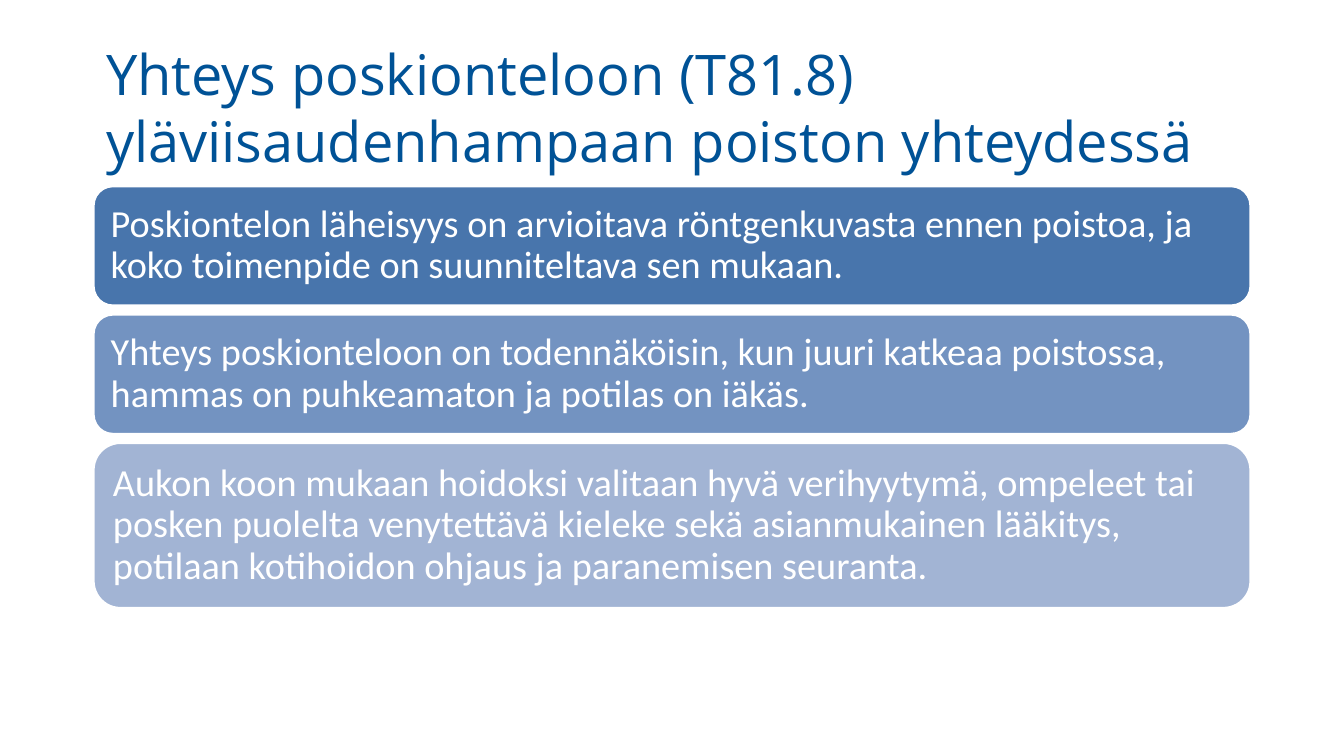
from dataclasses import dataclass

from pptx import Presentation
from pptx.dml.color import RGBColor
from pptx.enum.shapes import MSO_SHAPE as Shape
from pptx.enum.text import MSO_ANCHOR as Anchor, PP_ALIGN as Align
from pptx.util import Inches, Pt


@dataclass(frozen=True)
class TextStyle:
    font: str
    size: float
    color: str
    line_spacing: float


@dataclass(frozen=True)
class Theme:
    title: TextStyle = TextStyle("Open Sans", 30, "005296", 1.0)
    body: TextStyle = TextStyle("Calibri", 20.5, "FFFFFF", 0.9)
    outline: str = "FFFFFF"


@dataclass(frozen=True)
class Panel:
    text: str
    fill: str
    height: float


THEME = Theme()
LEFT, WIDTH = 0.69, 8.62
PANELS_TOP, PANELS_BOTTOM = 1.38, 4.53

TITLE = "Yhteys poskionteloon (T81.8) yläviisaudenhampaan poiston yhteydessä"
PANELS = [
    Panel("Poskiontelon läheisyys on arvioitava röntgenkuvasta ennen poistoa, "
          "ja koko toimenpide on suunniteltava sen mukaan.", "4875AC", 0.9),
    Panel("Yhteys poskionteloon on todennäköisin, kun juuri katkeaa poistossa, "
          "hammas on puhkeamaton ja potilas on iäkäs.", "7393C1", 0.9),
    Panel("Aukon koon mukaan hoidoksi valitaan hyvä verihyytymä, ompeleet tai "
          "posken puolelta venytettävä kieleke sekä asianmukainen lääkitys, "
          "potilaan kotihoidon ohjaus ja paranemisen seuranta.", "A2B4D4", 1.24),
]


def write_text(sp, text: str, style: TextStyle) -> None:
    """Write one left-aligned, vertically centred paragraph."""
    tf = sp.text_frame
    tf.word_wrap = True
    tf.vertical_anchor = Anchor.MIDDLE
    p = tf.paragraphs[0]
    p.alignment = Align.LEFT
    p.line_spacing = style.line_spacing
    r = p.add_run()
    r.text = text
    r.font.name = style.font
    r.font.size = Pt(style.size)
    r.font.color.rgb = RGBColor.from_string(style.color)


def add_title(slide, text: str) -> None:
    sp = slide.shapes.title
    sp.left, sp.top = Inches(LEFT), Inches(0.24)
    sp.width, sp.height = Inches(WIDTH), Inches(1.11)
    write_text(sp, text, THEME.title)


def add_panel(slide, panel: Panel, top: float) -> None:
    sp = slide.shapes.add_shape(Shape.ROUNDED_RECTANGLE, Inches(LEFT), Inches(top),
                                Inches(WIDTH), Inches(panel.height))
    sp.shadow.inherit = False
    sp.fill.solid()
    sp.fill.fore_color.rgb = RGBColor.from_string(panel.fill)
    sp.line.color.rgb = RGBColor.from_string(THEME.outline)
    sp.line.width = Pt(2)
    tf = sp.text_frame
    tf.margin_left = tf.margin_right = tf.margin_top = tf.margin_bottom = Inches(0.09)
    write_text(sp, panel.text, THEME.body)


def main() -> None:
    # 16:9 page
    prs = Presentation()
    prs.slide_width = Inches(10)
    prs.slide_height = prs.slide_width * 9 // 16
    slide = prs.slides.add_slide(prs.slide_layouts[5])  # title only

    add_title(slide, TITLE)

    # Panels stacked with equal gaps
    free = PANELS_BOTTOM - PANELS_TOP - sum(panel.height for panel in PANELS)
    gap = free / (len(PANELS) - 1)
    top = PANELS_TOP
    for panel in PANELS:
        add_panel(slide, panel, top)
        top += panel.height + gap

    prs.save("out.pptx")


if __name__ == "__main__":
    main()
